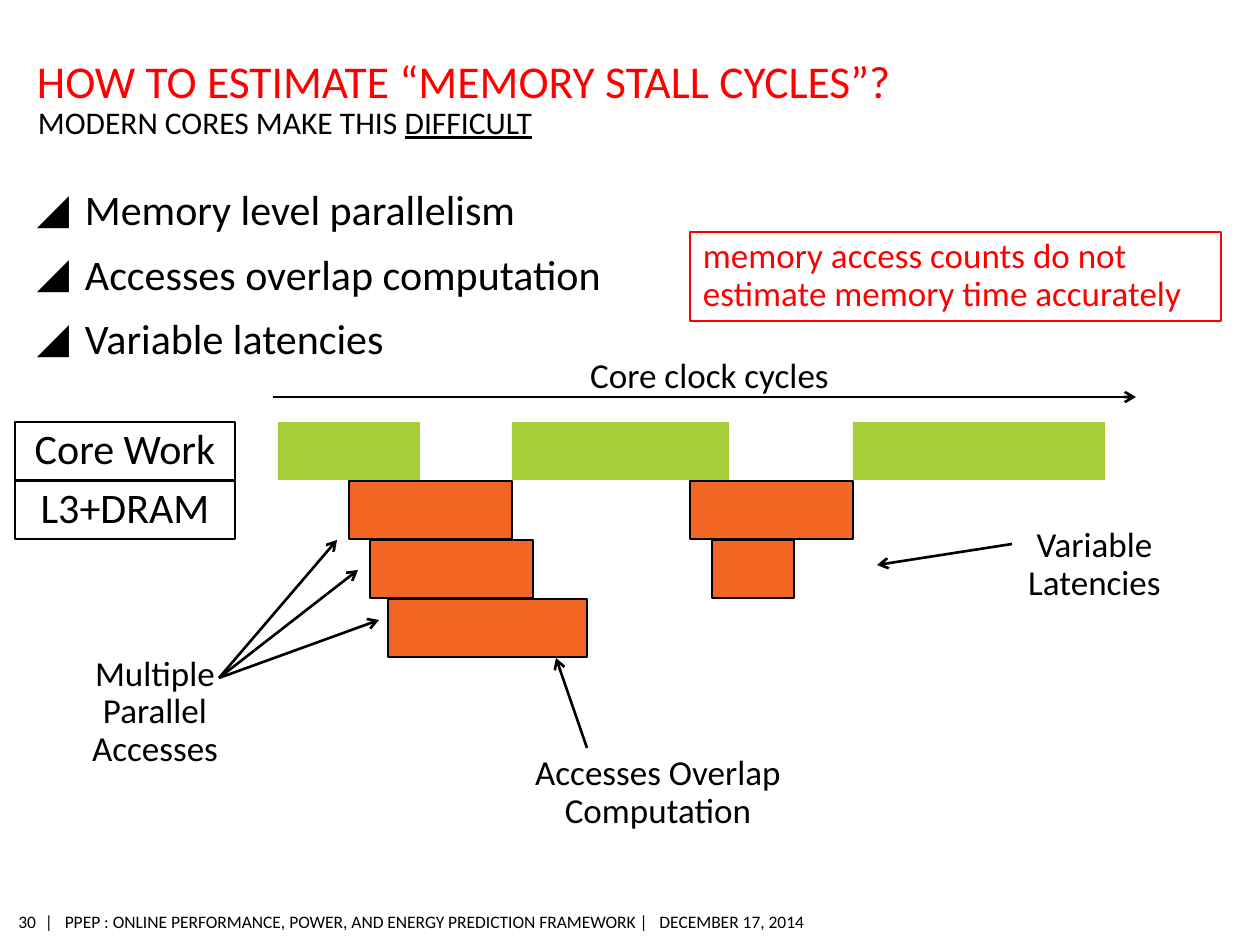
from lxml import etree
from pptx import Presentation
from pptx import util as u
from pptx.dml.color import RGBColor
from pptx.enum import shapes, text
from pptx.oxml import ns

SCALE = u.Inches(1) / 126
BLACK = RGBColor(0x00, 0x00, 0x00)
WHITE = RGBColor(0xFF, 0xFF, 0xFF)
RED = RGBColor(0xFF, 0x00, 0x00)
GREEN = RGBColor(0xA6, 0xCE, 0x39)
ORANGE = RGBColor(0xF2, 0x65, 0x22)
LEFT, MID, RIGHT = text.PP_ALIGN.LEFT, text.PP_ALIGN.CENTER, text.PP_ALIGN.RIGHT
TOP, CENTER, BOTTOM = text.MSO_ANCHOR.TOP, text.MSO_ANCHOR.MIDDLE, text.MSO_ANCHOR.BOTTOM
PAD = (13, 6, 13, 6)
FLAT = (0, 5, 0, 5)


def px(n):
    return u.Emu(round(n * SCALE))


def add(parent, tag, **attrs):
    return etree.SubElement(parent, ns.qn(tag), attrs)


class Pen:
    font = "Calibri"

    def __init__(self, slide):
        self.slide = slide

    def style(self, item, size, color):
        item.font.name = self.font
        item.font.size = u.Pt(size)
        item.font.color.rgb = color

    def frame(self, shape, pad, anchor, wrap=True):
        frame = shape.text_frame
        frame.word_wrap = wrap
        frame.vertical_anchor = anchor
        (frame.margin_left, frame.margin_top,
         frame.margin_right, frame.margin_bottom) = map(px, pad)
        return frame

    def fill(self, shape, words, size, color=BLACK, align=LEFT, pad=PAD,
             anchor=CENTER, wrap=True, gap=0.9):
        para = self.frame(shape, pad, anchor, wrap).paragraphs[0]
        para.text = words
        para.alignment = align
        para.line_spacing = gap
        self.style(para, size, color)

    def area(self, box):
        return self.slide.shapes.add_textbox(*map(px, box))

    def label(self, box, words, size, **look):
        self.fill(self.area(box), words, size, **look)

    def mixed(self, box, parts, size, color=BLACK):
        para = self.frame(self.area(box), (0, 0, 0, 0), TOP).paragraphs[0]
        for words, under in parts:
            run = para.add_run()
            run.text = words
            self.style(run, size, color)
            if under:
                run.font.underline = True

    def bullets(self, box, items, size):
        frame = self.frame(self.area(box), FLAT, TOP)
        for i, words in enumerate(items):
            para = frame.add_paragraph() if i else frame.paragraphs[0]
            para.text = words
            props = para._p.get_or_add_pPr()
            props.set("marL", str(px(48)))
            props.set("indent", str(px(-48)))
            add(add(props, "a:buClr"), "a:srgbClr", val=str(BLACK))
            add(props, "a:buFont", typeface=self.font)
            add(props, "a:buChar", char="◢")
            if i:
                para.space_before = u.Pt(8)
            self.style(para, size, BLACK)

    def rect(self, box, color=None, edge=None, width=1):
        shape = self.slide.shapes.add_shape(
            shapes.MSO_SHAPE.RECTANGLE, *map(px, box))
        shape.shadow.inherit = False
        if color is None:
            shape.fill.background()
        else:
            shape.fill.solid()
            shape.fill.fore_color.rgb = color
        if edge is None:
            shape.line.fill.background()
        else:
            shape.line.color.rgb = edge
            shape.line.width = u.Pt(width)
        return shape

    def arrow(self, start, end):
        link = self.slide.shapes.add_connector(
            shapes.MSO_CONNECTOR.STRAIGHT, *map(px, (*start, *end)))
        link.line.color.rgb = BLACK
        link.line.width = u.Pt(1.5)
        add(link.line._get_or_add_ln(), "a:tailEnd", type="arrow")
        add(link._element.spPr, "a:effectLst")


def main():
    deck = Presentation()
    deck.slide_width, deck.slide_height = px(1260), px(945)
    pen = Pen(deck.slides.add_slide(deck.slide_layouts[6]))

    pen.label((45, 905, 770, 33),
              "|   PPEP : ONLINE PERFORMANCE, POWER, AND ENERGY PREDICTION "
              "FRAMEWORK |   DECEMBER 17, 2014",
              10, pad=FLAT, wrap=False, gap=1)
    pen.label((16, 905, 20, 33), "30", 10, align=RIGHT, pad=FLAT,
              wrap=False, gap=1)
    pen.label((37, 43, 1058, 65), "HOW TO ESTIMATE “MEMORY STALL CYCLES”?",
              26, color=RED, pad=(0, 6, 0, 0), anchor=BOTTOM, gap=1)
    pen.mixed((38, 103, 1058, 39),
              [("MODERN CORES MAKE THIS ", False), ("DIFFICULT", True)], 18)
    pen.bullets((37, 179, 1184, 140),
                ["Memory level parallelism", "Accesses overlap computation",
                 "Variable latencies"], 24)

    first, pitch, high = 422, 59, 58
    for row, words in enumerate(["Core Work", "L3+DRAM"]):
        box = pen.rect((15, first + row * pitch, 220, high), WHITE, BLACK, 1.5)
        pen.fill(box, words, 24, align=MID)

    for row, left, wide in [(1, 349, 163), (2, 370, 163), (3, 388, 199),
                            (1, 690, 163), (2, 712, 82)]:
        pen.rect((left, first + row * pitch, wide, high), ORANGE, BLACK)
    for left, wide in [(278, 71), (349, 71), (512, 217), (853, 252)]:
        pen.rect((left, first, wide, high), GREEN)

    for end in [(337, 540), (358, 570), (379, 620)]:
        pen.arrow((219, 678), end)
    pen.arrow((587, 748), (556, 658))
    pen.arrow((1012, 544), (877, 565))
    pen.arrow((273, 397), (1136, 397))

    for box, words in [((75, 649, 160, 127), "Multiple Parallel Accesses"),
                       ((512, 748, 292, 90), "Accesses Overlap Computation"),
                       ((995, 520, 199, 90), "Variable Latencies"),
                       ((278, 352, 863, 50), "Core clock cycles")]:
        pen.label(box, words, 20, align=MID)

    note = pen.rect((690, 232, 531, 89), edge=RED, width=0.75)
    pen.fill(note, "memory access counts do not estimate memory time accurately",
             20, color=RED)

    deck.save("out.pptx")


if __name__ == "__main__":
    main()
